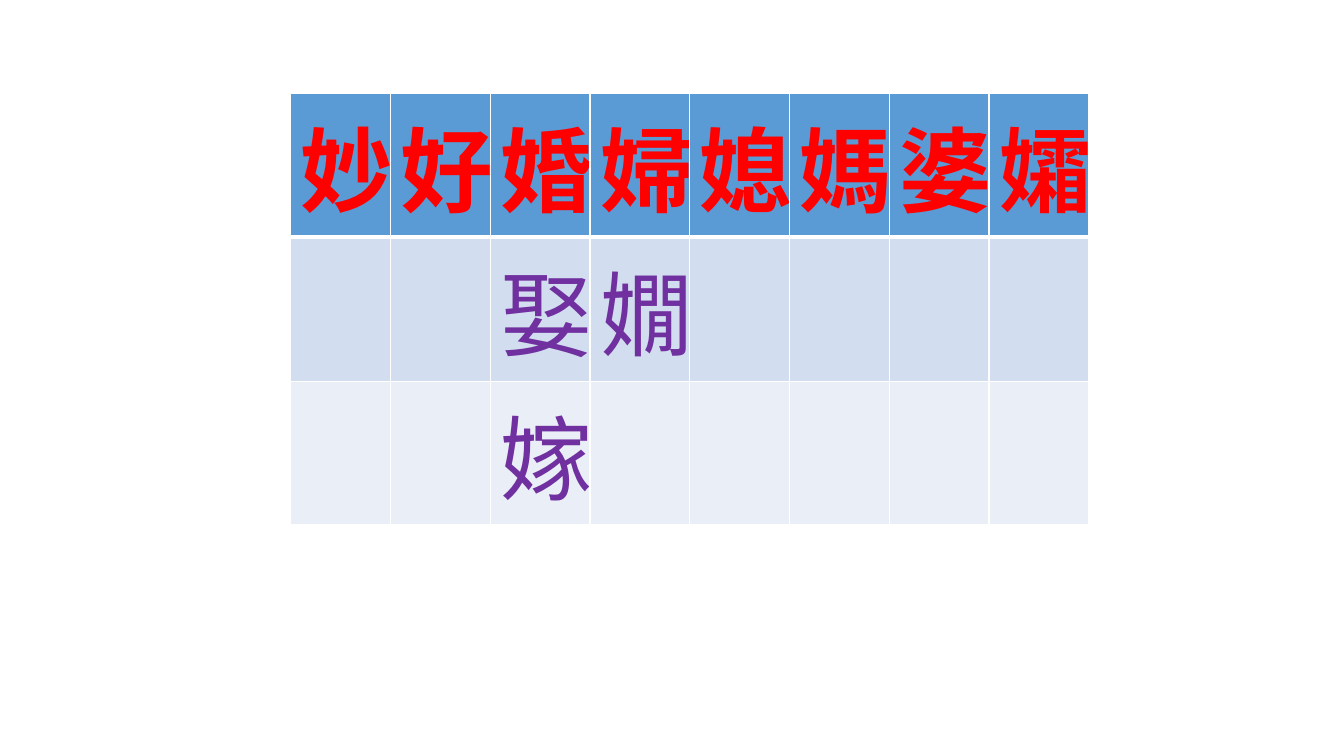
from dataclasses import dataclass

import pptx
import pptx.dml.color
import pptx.enum.lang
import pptx.enum.text
import pptx.oxml
import pptx.oxml.ns
import pptx.table
import pptx.util

PX = 9525  # EMU in one px


@dataclass(frozen=True)
class Theme:
    font: str = "Arial"
    size: int = 66
    header_text: str = "FF0000"
    body_text: str = "7030A0"
    header_fill: str = "5B9BD5"
    odd_fill: str = "D2DEEF"
    even_fill: str = "EAEFF7"
    border: str = "FFFFFF"
    thin: int = 1
    thick: int = 3


@dataclass(frozen=True)
class RowSpec:
    characters: dict[int, str]
    fill: str
    color: str
    bold: bool
    top: int
    bottom: int


THEME = Theme()
LEFT, TOP, COL_W, ROW_H = 277, 89, 95, 137
HEADER = "妙好婚婦媳媽婆孀"

ROWS = [
    RowSpec(dict(enumerate(HEADER)), THEME.header_fill, THEME.header_text,
            True, THEME.thin, THEME.thick),
    RowSpec({2: "娶", 3: "嫺"}, THEME.odd_fill, THEME.body_text,
            False, THEME.thick, THEME.thin),
    RowSpec({2: "嫁"}, THEME.even_fill, THEME.body_text,
            False, THEME.thin, THEME.thin),
]


def px(n: int) -> pptx.util.Emu:
    return pptx.util.Emu(n * PX)


def rgb(color: str) -> pptx.dml.color.RGBColor:
    return pptx.dml.color.RGBColor.from_string(color)


def set_borders(cell: pptx.table._Cell, row: RowSpec) -> None:
    widths = {"lnL": THEME.thin, "lnR": THEME.thin,
              "lnT": row.top, "lnB": row.bottom}
    tc_pr = cell._tc.get_or_add_tcPr()
    for tag, width in widths.items():
        tc_pr.append(pptx.oxml.parse_xml(
            f'<a:{tag} {pptx.oxml.ns.nsdecls("a")} w="{pptx.util.Pt(width)}">'
            f'<a:solidFill><a:srgbClr val="{THEME.border}"/></a:solidFill>'
            f'</a:{tag}>'))


def write_character(cell: pptx.table._Cell, text: str, row: RowSpec) -> None:
    cell.vertical_anchor = pptx.enum.text.MSO_ANCHOR.MIDDLE
    p = cell.text_frame.paragraphs[0]
    p.alignment = pptx.enum.text.PP_ALIGN.CENTER
    r = p.add_run()
    r.text = text
    formats = {"name": THEME.font, "size": pptx.util.Pt(THEME.size),
               "bold": row.bold,
               "language_id": pptx.enum.lang.MSO_LANGUAGE_ID.TRADITIONAL_CHINESE}
    for name, value in formats.items():
        setattr(r.font, name, value)
    r.font.color.rgb = rgb(row.color)


def main() -> None:
    prs = pptx.Presentation()
    prs.slide_width, prs.slide_height = px(1280), px(720)
    s = prs.slides.add_slide(prs.slide_layouts[6])

    # Character table
    cols = len(HEADER)
    table = s.shapes.add_table(len(ROWS), cols, px(LEFT), px(TOP),
                               px(COL_W * cols), px(ROW_H * len(ROWS))).table
    for i, row in enumerate(ROWS):
        for j in range(cols):
            cell = table.cell(i, j)
            set_borders(cell, row)
            cell.fill.solid()
            cell.fill.fore_color.rgb = rgb(row.fill)
            if j in row.characters:
                write_character(cell, row.characters[j], row)

    prs.save("out.pptx")


if __name__ == "__main__":
    main()
